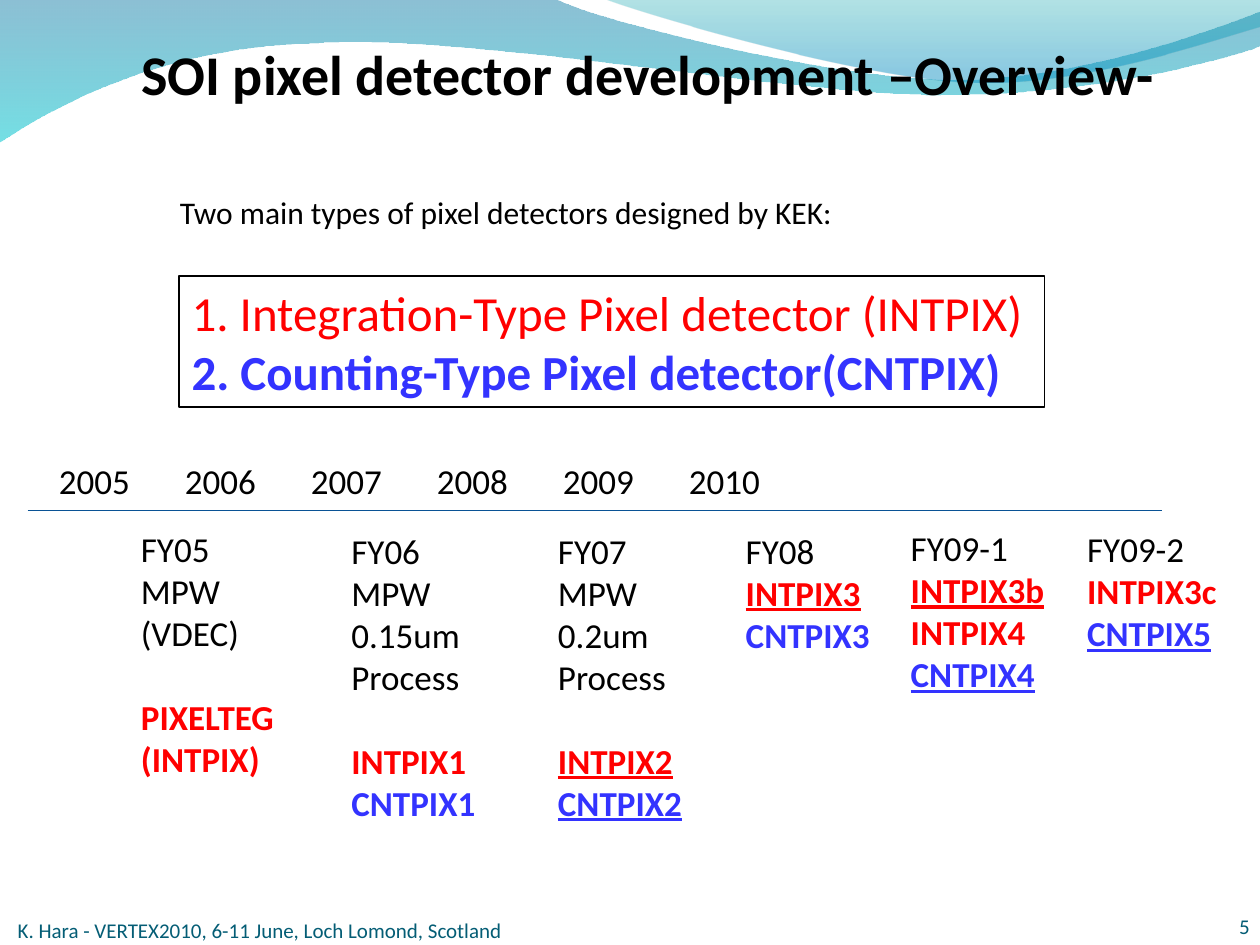
import pptx
import pptx.dml.color
import pptx.enum.shapes
import pptx.enum.text
import pptx.oxml
import pptx.oxml.ns
import pptx.util
from dataclasses import dataclass
from pptx.util import Inches


@dataclass(frozen=True)
class Theme:
    font: str = "Calibri"
    black: str = "000000"
    red: str = "FF0000"
    blue: str = "3333FF"
    footer: str = "045D75"
    timeline: str = "095295"
    title_size: int = 32
    list_size: int = 28
    label_size: int = 20
    intro_size: int = 18
    footer_size: int = 12


theme = Theme()
rgb = pptx.dml.color.RGBColor.from_string
qn = pptx.oxml.ns.qn
namespace = pptx.oxml.ns.nsdecls("a")
Anchor = pptx.enum.text.MSO_ANCHOR
Align = pptx.enum.text.PP_ALIGN


def write(shape, text, size, color=theme.black, bold=False, underline=False,
          space_before=0, align=Align.LEFT, tabs=()):
    frame = shape.text_frame
    paragraph = frame.add_paragraph() if frame.text else frame.paragraphs[0]
    properties = paragraph._p.get_or_add_pPr()
    properties.set("marL", "0")
    properties.set("indent", "0")
    properties.append(pptx.oxml.parse_xml(f"<a:buNone {namespace}/>"))
    if tabs:
        stops = "".join(f'<a:tab pos="{Inches(tab)}" algn="l"/>' for tab in tabs)
        properties.append(pptx.oxml.parse_xml(f"<a:tabLst {namespace}>{stops}</a:tabLst>"))
    paragraph.alignment = align
    paragraph.space_before = pptx.util.Pt(space_before)
    run = paragraph.add_run()
    run.text = text
    run.font.name = theme.font
    run.font.size = pptx.util.Pt(size)
    run.font.color.rgb = rgb(color)
    run.font.bold = bold
    run.font.underline = underline


def place(shape, left, top, width, height, anchor=Anchor.TOP, inset=None):
    shape.left, shape.top = Inches(left), Inches(top)
    shape.width, shape.height = Inches(width), Inches(height)
    frame = shape.text_frame
    frame.auto_size = pptx.enum.text.MSO_AUTO_SIZE.NONE
    frame.word_wrap = False
    frame.vertical_anchor = anchor
    if inset is not None:
        frame.margin_left = frame.margin_right = Inches(inset)
        frame.margin_top = frame.margin_bottom = Inches(inset)
    return shape


presentation = pptx.Presentation()
presentation.slide_width, presentation.slide_height = Inches(10), Inches(7.5)
slide = presentation.slides.add_slide(presentation.slide_layouts[1])
shapes = slide.shapes

waves = [
    ([[(0, 0)], [(4.4, -0.01)],
      [(4.76, 0.17), (6.64, 0.63), (7.58, 0.63)],
      [(8.53, 0.63), (9.58, 0.26), (10, 0.09)],
      [(10.01, 0.36)],
      [(9.83, 0.44), (8.7, 0.76), (7.46, 0.75)],
      [(6.22, 0.75), (3.82, 0.28), (2.57, 0.34)],
      [(1.29, 0.36), (0.46, 0.83), (-0.01, 1.13)],
      [(0, 0)]],
     [(0, "0074A1", 45), (1, "00C6CF", 55)]),
    ([[(4.79, -0.01)],
      [(5.09, 0.11), (6.82, 0.62), (7.69, 0.65)],
      [(8.56, 0.69), (9.61, 0.32), (10, 0.21)],
      [(10, 0)], [(4.79, -0.01)]],
     [(0, "00A1A9", 30), (0.8, "008BBF", 45)]),
]
for layer, (segments, stops) in enumerate(waves):
    outline = [(Inches(x), Inches(y)) for segment in segments for x, y in segment]
    builder = shapes.build_freeform(*outline[0])
    builder.add_line_segments(outline[1:], close=True)
    wave = builder.convert_to_shape()
    lines = iter(list(wave.element.iter(qn("a:lnTo"))))
    for segment in segments[1:]:
        parts = [next(lines) for point in segment]
        if len(parts) == 3:
            curve = pptx.oxml.parse_xml(f"<a:cubicBezTo {namespace}/>")
            parts[0].addprevious(curve)
            for part in parts:
                curve.append(part[0])
                part.getparent().remove(part)
    wave.shadow.inherit = False
    wave.line.fill.background()
    wave.fill.gradient()
    wave.fill.gradient_angle = 270
    for gradient_stop, (position, color, opacity) in zip(wave.fill.gradient_stops, stops):
        gradient_stop.position = position
        gradient_stop.color.rgb = rgb(color)
    color_elements = list(wave.element.spPr.iter(qn("a:srgbClr")))
    for color_element, (position, color, opacity) in zip(color_elements, stops):
        color_element.append(pptx.oxml.parse_xml(f'<a:alpha {namespace} val="{opacity * 1000}"/>'))
    wave.element.getparent().insert(2 + layer, wave.element)

title = place(shapes.title, 1.02, 0.26, 8.32, 0.64)
write(title, "SOI pixel detector development –Overview-", theme.title_size, bold=True)

intro = place(shapes.add_textbox(0, 0, 0, 0), 1.33, 1.48, 5.44, 0.4)
write(intro, "Two main types of pixel detectors designed by KEK:", theme.intro_size)

detector_types = place(slide.placeholders[1], 1.42, 2.19, 6.87, 1.04)
detector_types.line.color.rgb = rgb(theme.black)
detector_types.line.width = pptx.util.Pt(0.75)
write(detector_types, "1. Integration-Type Pixel detector (INTPIX)", theme.list_size, color=theme.red)
write(detector_types, "2. Counting-Type Pixel detector(CNTPIX)", theme.list_size,
      color=theme.blue, bold=True)

year_tabs = [1.38 * index for index in range(1, 5)] + [7.9]
years = place(shapes.add_textbox(0, 0, 0, 0), 0.37, 3.6, 9.04, 0.44)
write(years, "\t".join(str(year) for year in range(2005, 2011)), theme.label_size, tabs=year_tabs)

timeline = shapes.add_connector(pptx.enum.shapes.MSO_CONNECTOR.STRAIGHT,
                                Inches(0.22), Inches(4.05), Inches(9.22), Inches(4.05))
timeline.line.color.rgb = rgb(theme.timeline)
timeline.line.width = pptx.util.Pt(0.75)
timeline.element.spPr.append(pptx.oxml.parse_xml(f"<a:effectLst {namespace}/>"))

plain = {}
red = {"color": theme.red, "bold": True}
blue = {"color": theme.blue, "bold": True}
underlined = {"underline": True}
gap = {"space_before": 24}
fiscal_years = [
    (1.02, 4.14, 1.27, 2.12, [("FY05", plain), ("MPW", plain), ("(VDEC)", plain),
                              ("PIXELTEG", red | gap), ("(INTPIX)", red)]),
    (2.69, 4.15, 1.19, 2.46, [("FY06", plain), ("MPW", plain), ("0.15um", plain), ("Process", plain),
                              ("INTPIX1", red | gap), ("CNTPIX1", blue)]),
    (4.33, 4.15, 1.19, 2.46, [("FY07", plain), ("MPW", plain), ("0.2um", plain), ("Process", plain),
                              ("INTPIX2", red | underlined | gap), ("CNTPIX2", blue | underlined)]),
    (5.82, 4.15, 1.19, 1.11, [("FY08", plain), ("INTPIX3", red | underlined), ("CNTPIX3", blue)]),
    (7.13, 4.13, 1.27, 1.45, [("FY09-1", plain), ("INTPIX3b", red | underlined),
                              ("INTPIX4", red), ("CNTPIX4", blue | underlined)]),
    (8.53, 4.14, 1.24, 1.11, [("FY09-2", plain), ("INTPIX3c", red), ("CNTPIX5", blue | underlined)]),
]
for left, top, width, height, entries in fiscal_years:
    column = place(shapes.add_textbox(0, 0, 0, 0), left, top, width, height)
    for text, text_format in entries:
        write(column, text, theme.label_size, **text_format)

footer = place(shapes.add_textbox(0, 0, 0, 0), 0.14, 7.08, 4.71, 0.4, Anchor.BOTTOM, 0)
write(footer, "K. Hara - VERTEX2010, 6-11 June, Loch Lomond, Scotland", theme.footer_size, color=theme.footer)
page_number = place(shapes.add_textbox(0, 0, 0, 0), 9.09, 7.05, 0.83, 0.4, Anchor.BOTTOM, 0)
page_number.text_frame.word_wrap = True
write(page_number, "5", theme.footer_size, color=theme.footer, align=Align.RIGHT)

presentation.save("out.pptx")
